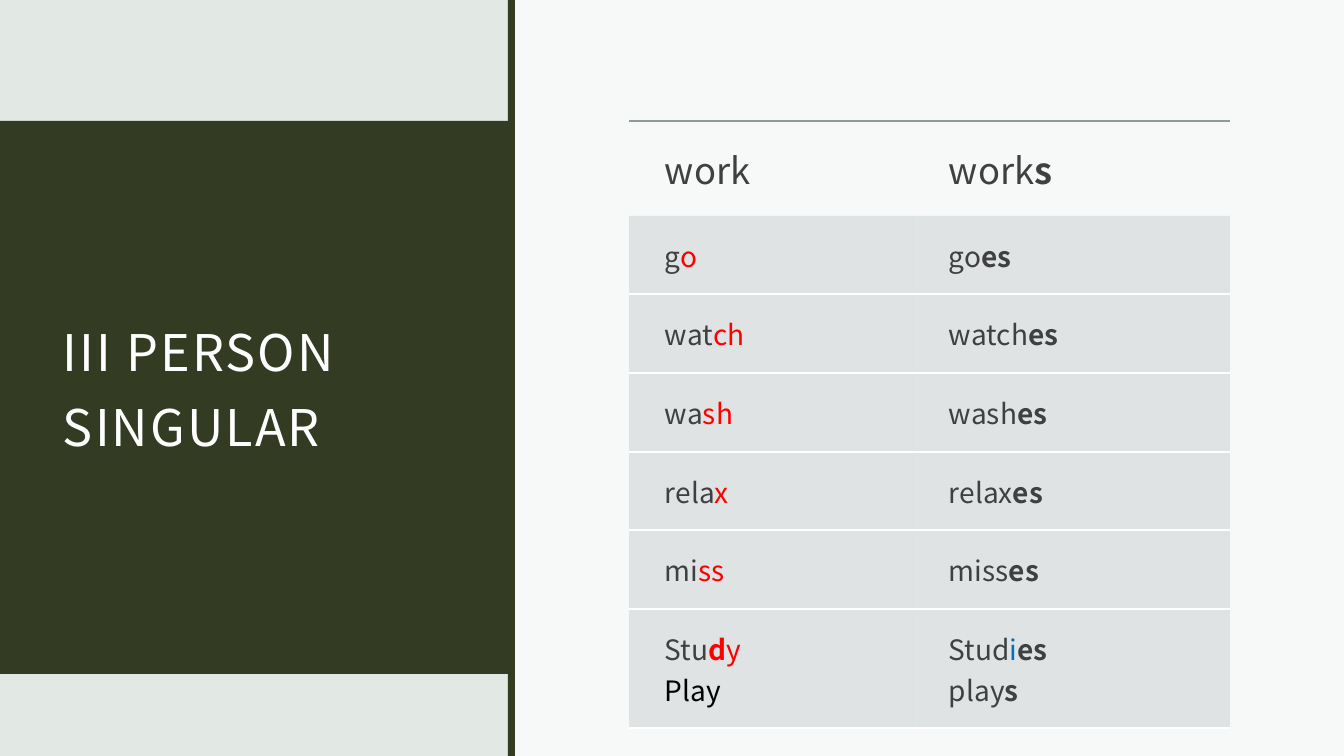
from lxml.etree import SubElement
from pptx import Presentation
from pptx.dml.color import RGBColor
from pptx.enum.shapes import MSO_SHAPE
from pptx.enum.text import MSO_ANCHOR, MSO_AUTO_SIZE, PP_ALIGN
from pptx.oxml import parse_xml
from pptx.oxml.ns import nsdecls, qn
from pptx.util import Pt

HUES = {
    "mist": "E2E8E4", "moss": "333B22", "white": "FFFFFF", "text": "404040",
    "red": "FF0000", "blue": "0070C0", "black": "000000",
    "band": "B4BCBE", "rule": "8F9A9D",
}
FONT = "Noto Sans CJK JP"
TITLE = "III PERSON SINGULAR"
PLAIN, BOLD = ("text", False), ("text", True)
RED, DARK, BLUE = ("red", False), ("black", False), ("blue", False)
VERBS = [
    ("g", "o", "go"),
    ("wat", "ch", "watch"),
    ("wa", "sh", "wash"),
    ("rela", "x", "relax"),
    ("mi", "ss", "miss"),
]
HEAD = ([[("work", PLAIN)]], [[("work", PLAIN), ("s", BOLD)]])
LAST = (
    [[("Stu", PLAIN), ("d", ("red", True)), ("y", RED)], [("Play", DARK)]],
    [[("Stud", PLAIN), ("i", BLUE), ("es", BOLD)],
     [("play", PLAIN), ("s", BOLD)]],
)
ROWS = [
    HEAD,
    *[([[(stem, PLAIN), (tail, RED)]], [[(verb, PLAIN), ("es", BOLD)]])
      for stem, tail, verb in VERBS],
    LAST,
]
PANELS = [
    ((0, 121, 515, 553), "moss", 100),
    ((515, 0, 829, 756), "white", 75),
    ((508, 0, 7, 756), "moss", 100),
]
COLS = (284, 317)
HEAD_H, ROW_H = 92, 77
NO_STYLE = "{2D5ABB26-0587-4C30-8999-92F81FD0307C}"


def px(size):
    return round(size * 914400 / 100.8)


def paint(fill, hue, alpha=100):
    fill.solid()
    fill.fore_color.rgb = RGBColor.from_string(HUES[hue])
    return alpha


def fade(root, alpha):
    if alpha < 100:
        tint = next(root.iter(qn("a:srgbClr")))
        SubElement(tint, qn("a:alpha")).set("val", str(alpha * 1000))


def inset(frame, left, top, right, base):
    frame.margin_left, frame.margin_top = px(left), px(top)
    frame.margin_right, frame.margin_bottom = px(right), px(base)


def edge(cell, side, hue, alpha=100):
    line = parse_xml(
        f'<a:{side} {nsdecls("a")} w="{Pt(1.5)}"><a:solidFill>'
        f'<a:srgbClr val="{HUES[hue]}"/></a:solidFill>'
        f'<a:prstDash val="solid"/></a:{side}>')
    fade(line, alpha)
    cell._tc.get_or_add_tcPr().insert(0, line)


def write(frame, lines, size):
    for i, line in enumerate(lines):
        para = frame.add_paragraph() if i else frame.paragraphs[0]
        para.font.name, para.font.size = FONT, Pt(size)
        for text, (hue, bold) in line:
            run = para.add_run()
            run.text = text
            run.font.bold = bold
            run.font.color.rgb = RGBColor.from_string(HUES[hue])


def add_panels(slide):
    for box, hue, alpha in PANELS:
        panel = slide.shapes.add_shape(MSO_SHAPE.RECTANGLE, *map(px, box))
        panel.shadow.inherit = False
        panel.line.fill.background()
        paint(panel.fill, hue)
        fade(panel._element.spPr, alpha)


def set_title(slide):
    title = slide.shapes.title
    title.left, title.top, title.width, title.height = map(
        px, (51, 188, 414, 279))
    frame = title.text_frame
    frame.word_wrap = True
    frame.auto_size = MSO_AUTO_SIZE.NONE
    frame.vertical_anchor = MSO_ANCHOR.BOTTOM
    inset(frame, 12, 12, 12, 10)
    write(frame, [[(TITLE, ("white", False))]], 36)
    para = frame.paragraphs[0]
    para.alignment = PP_ALIGN.LEFT
    para.line_spacing = 1.25
    para.runs[0]._r.get_or_add_rPr().set("spc", "150")
    slide.shapes._spTree.append(title._element)


def add_verbs(slide):
    high = HEAD_H + ROW_H * (len(ROWS) - 1)
    box = (629, 121, sum(COLS), high)
    table = slide.shapes.add_table(
        len(ROWS), len(COLS), *map(px, box)).table
    table.first_row = table.horz_banding = False
    table._tbl.tblPr.find(qn("a:tableStyleId")).text = NO_STYLE
    for col, wide in zip(table.columns, COLS):
        col.width = px(wide)
    for r, row in enumerate(ROWS):
        table.rows[r].height = px(ROW_H if r else HEAD_H)
        pad = 19 if r else 21
        for c, lines in enumerate(row):
            cell = table.cell(r, c)
            inset(cell, 36, pad, pad, pad)
            write(cell.text_frame, lines, 20 if r else 26)
            if r:
                paint(cell.fill, "band")
                fade(cell._tc.tcPr, 35)
                edge(cell, "lnB", "white")
            else:
                cell.fill.background()
                edge(cell, "lnT", "rule", 60)


def main():
    deck = Presentation()
    deck.slide_width, deck.slide_height = px(1344), px(756)
    slide = deck.slides.add_slide(deck.slide_layouts[5])
    paint(slide.background.fill, "mist")
    add_panels(slide)
    set_title(slide)
    add_verbs(slide)
    deck.save("out.pptx")


if __name__ == "__main__":
    main()
